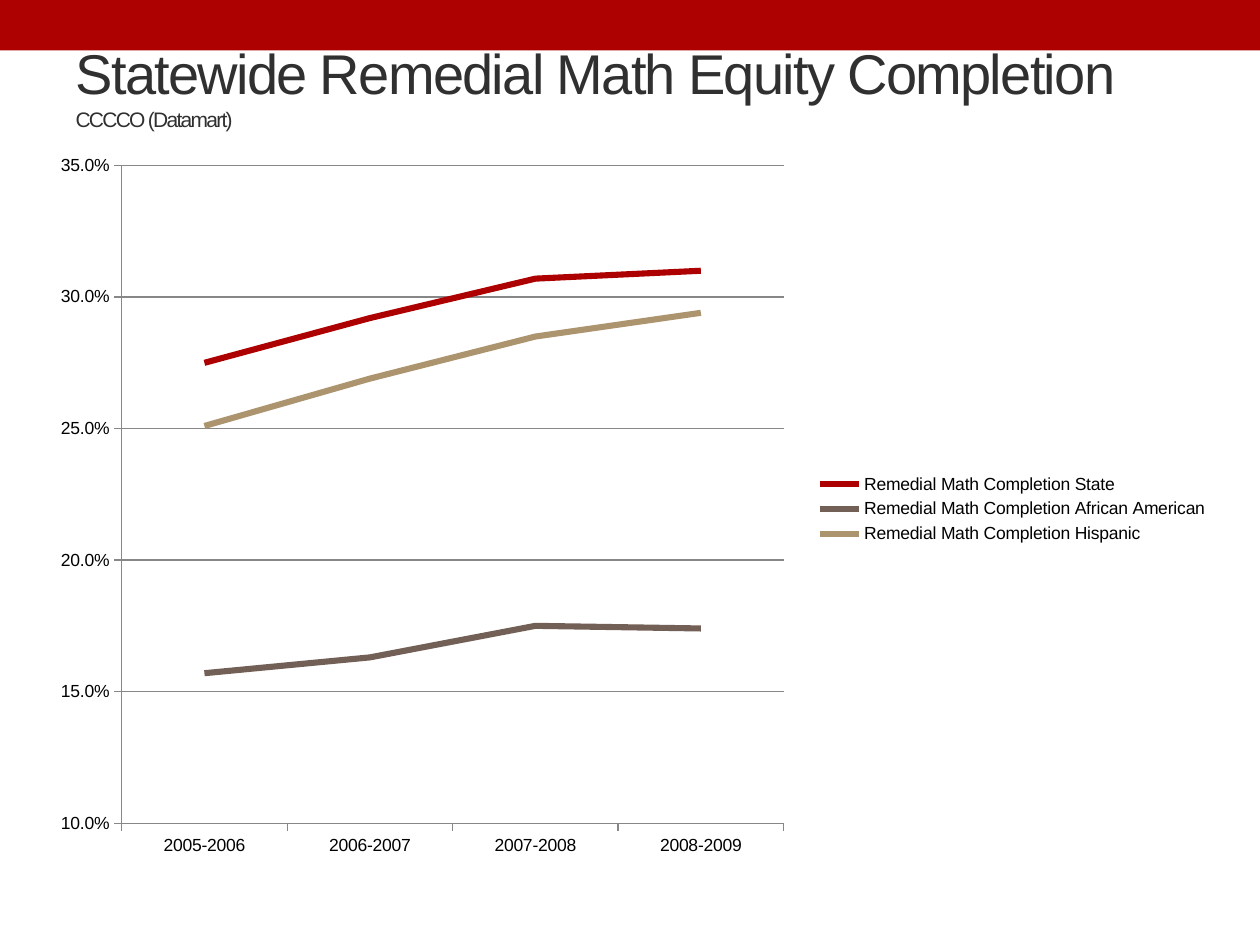
from dataclasses import dataclass

from lxml.etree import SubElement
from pptx import Presentation
from pptx.chart.data import CategoryChartData
from pptx.dml.color import RGBColor
from pptx.enum.chart import (XL_CHART_TYPE, XL_LEGEND_POSITION,
                             XL_MARKER_STYLE, XL_TICK_MARK)
from pptx.enum.shapes import MSO_SHAPE
from pptx.enum.text import MSO_ANCHOR, PP_ALIGN
from pptx.oxml.ns import qn
from pptx.util import Pt


@dataclass(frozen=True)
class Theme:
    font: str = "Arial"
    red: str = "AD0101"
    brown: str = "726056"
    tan: str = "AC956E"
    ink: str = "303030"
    black: str = "000000"
    grid: str = "878787"
    head: float = 32
    sub: float = 12
    label: float = 10


THEME = Theme()
WIDE, HIGH = 720, 540
YEARS = ["2005-2006", "2006-2007", "2007-2008", "2008-2009"]
RATES = [
    ("State", THEME.red, (0.275, 0.292, 0.307, 0.31)),
    ("African American", THEME.brown, (0.157, 0.163, 0.175, 0.174)),
    ("Hispanic", THEME.tan, (0.251, 0.269, 0.285, 0.294)),
]


def style(font, size, color):
    font.name, font.size = THEME.font, Pt(size)
    font.color.rgb = RGBColor.from_string(color)


def write(para, text, size=THEME.label, color=THEME.ink, track=0):
    run = para.add_run()
    run.text = text
    style(run.font, size, color)
    run.font._element.set("spc", str(track * 100))


def stroke(line, color, width):
    line.color.rgb = RGBColor.from_string(color)
    line.width = Pt(width)


def band(slide, x, y, w, h):
    bar = slide.shapes.add_shape(MSO_SHAPE.RECTANGLE, Pt(x), Pt(y), Pt(w), Pt(h))
    bar.shadow.inherit = False
    bar.fill.solid()
    bar.fill.fore_color.rgb = RGBColor.from_string(THEME.red)
    bar.line.fill.background()
    # Send the band behind the title
    slide.shapes._spTree.insert(2, bar._element)


def heading(slide, x, y, w, h):
    title = slide.shapes.title
    title.left, title.top, title.width, title.height = map(Pt, (x, y, w, h))
    frame = title.text_frame
    frame.word_wrap = True
    frame.vertical_anchor = MSO_ANCHOR.MIDDLE
    para = frame.paragraphs[0]
    para.alignment = PP_ALIGN.LEFT
    write(para, "Statewide Remedial Math Equity Completion", size=THEME.head, track=-1)
    para.add_line_break()
    write(para, "CCCCO (Datamart)", size=THEME.sub, track=-1)


def place(chart, **box):
    """Fix the inner plot area as fractions of the chart."""
    area = chart._chartSpace.chart.plotArea
    layout = area.find(qn("c:layout"))
    if layout is None:
        layout = SubElement(area, qn("c:layout"))
        area.insert(0, layout)
    manual = SubElement(layout, qn("c:manualLayout"))
    parts = dict(layoutTarget="inner", xMode="edge", yMode="edge", **box)
    for name, value in parts.items():
        SubElement(manual, qn(f"c:{name}")).set("val", str(value))


def trend(slide, x, y, w, h):
    data = CategoryChartData(number_format="0.0%")
    data.categories = YEARS
    for group, _, rates in RATES:
        data.add_series(f"Remedial Math Completion {group}", rates)
    chart = slide.shapes.add_chart(
        XL_CHART_TYPE.LINE, Pt(x), Pt(y), Pt(w), Pt(h), data).chart
    style(chart.font, THEME.label, THEME.black)
    chart.has_title = False
    place(chart, x=0.07, y=0.03, w=0.56, h=0.9)

    # Lines
    plot = chart.plots[0]
    plot.vary_by_categories = False
    for series, (_, color, _) in zip(plot.series, RATES):
        series.smooth = False
        series.marker.style = XL_MARKER_STYLE.NONE
        stroke(series.format.line, color, 3.5)

    # Axes
    for axis in (chart.category_axis, chart.value_axis):
        axis.major_tick_mark = XL_TICK_MARK.OUTSIDE
        axis.minor_tick_mark = XL_TICK_MARK.NONE
        stroke(axis.format.line, THEME.grid, 0.75)
    scale = chart.value_axis
    scale.minimum_scale, scale.maximum_scale, scale.major_unit = 0.1, 0.35, 0.05
    scale.tick_labels.number_format = "0.0%"
    scale.tick_labels.number_format_is_linked = False
    scale.has_major_gridlines = True
    stroke(scale.major_gridlines.format.line, THEME.grid, 0.75)

    # Legend
    chart.has_legend = True
    chart.legend.position = XL_LEGEND_POSITION.RIGHT
    chart.legend.include_in_layout = False
    style(chart.legend.font, THEME.label, THEME.black)


def main():
    deck = Presentation()
    deck.slide_width, deck.slide_height = Pt(WIDE), Pt(HIGH)
    slide = deck.slides.add_slide(deck.slide_layouts[5])
    band(slide, 0, 0, WIDE, 28.8)
    heading(slide, 36, 3.6, 648, 90)
    trend(slide, 22.3, 82.1, 675.4, 417.6)
    deck.save("out.pptx")


if __name__ == "__main__":
    main()
